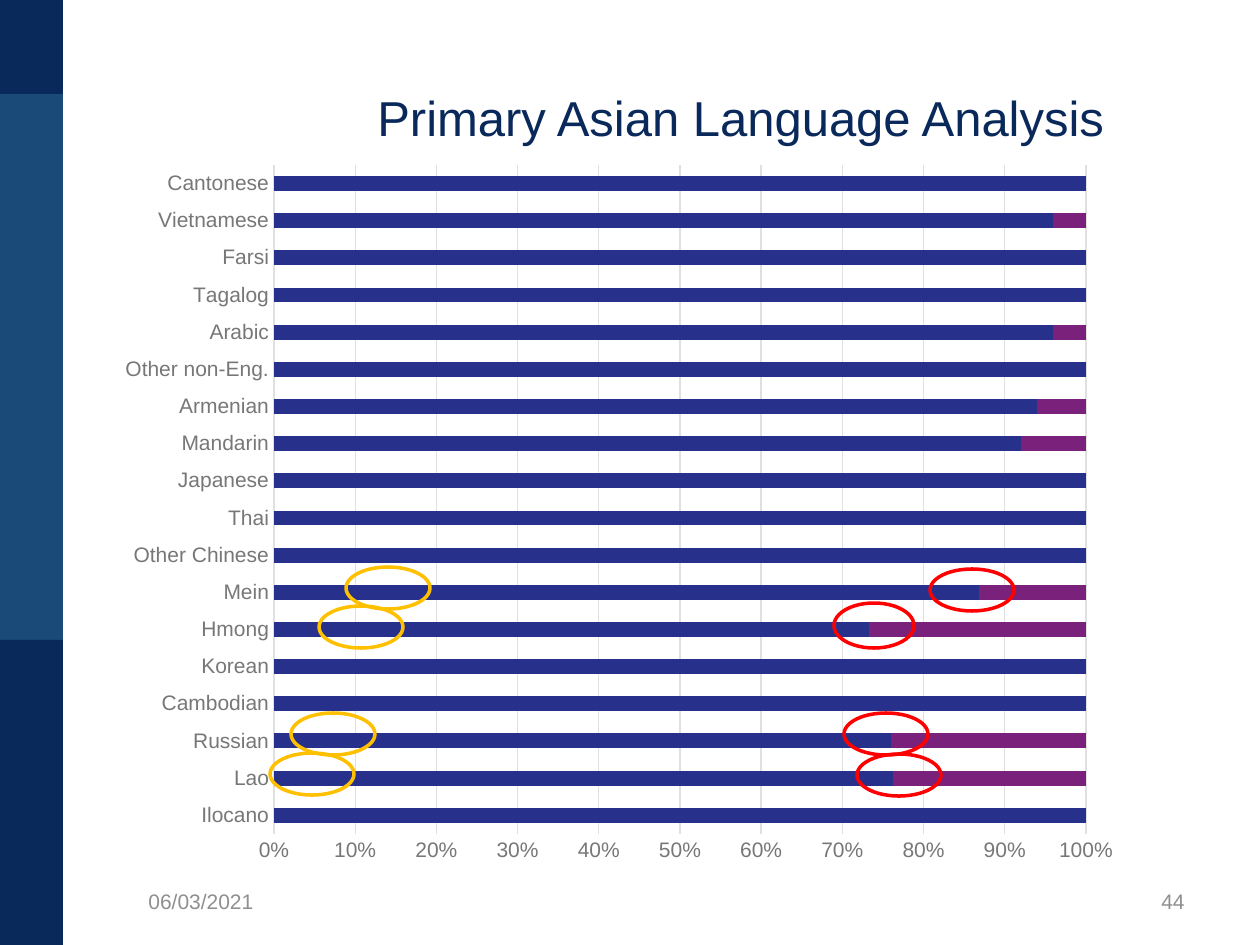
from dataclasses import dataclass

from lxml import etree
from pptx import Presentation
from pptx.chart.data import CategoryChartData
from pptx.dml.color import RGBColor
from pptx.enum.chart import XL_CHART_TYPE, XL_TICK_MARK
from pptx.enum.shapes import MSO_SHAPE
from pptx.enum.text import MSO_ANCHOR, PP_ALIGN
from pptx.oxml.ns import qn
from pptx.util import Emu, Pt

BAR_STACKED_100 = XL_CHART_TYPE.BAR_STACKED_100
NO_TICK = XL_TICK_MARK.NONE
RECTANGLE, OVAL = MSO_SHAPE.RECTANGLE, MSO_SHAPE.OVAL
MIDDLE = MSO_ANCHOR.MIDDLE
LEFT, CENTER, RIGHT = PP_ALIGN.LEFT, PP_ALIGN.CENTER, PP_ALIGN.RIGHT
EMU_PER_PX = 914400 / 126


@dataclass(frozen=True)
class Theme:
    font: str = "Arial"
    navy: str = "0A295B"
    blue: str = "1A4A78"
    bar: str = "27318B"
    bar_end: str = "7A227B"
    axis_text: str = "777777"
    grid: str = "E0E0E0"
    footer: str = "8F8F8F"
    amber: str = "FFC000"
    red: str = "FF0000"
    title_size: int = 28
    small_size: int = 12
    ring_width: int = 2
    grid_width: float = 0.75


THEME = Theme()

LANGUAGES = [
    ("Ilocano", 0, 100, 0),
    ("Lao", 6, 71, 24),
    ("Russian", 8, 68, 24),
    ("Cambodian", 11, 89, 0),
    ("Korean", 11, 89, 0),
    ("Hmong", 12, 62, 27),
    ("Mein", 13, 73, 13),
    ("Other Chinese", 14, 86, 0),
    ("Thai", 17, 83, 0),
    ("Japanese", 20, 80, 0),
    ("Mandarin", 27, 65, 8),
    ("Armenian", 33, 61, 6),
    ("Other non-Eng.", 42, 58, 0),
    ("Arabic", 46, 50, 4),
    ("Tagalog", 57, 43, 0),
    ("Farsi", 62, 38, 0),
    ("Vietnamese", 69, 27, 4),
    ("Cantonese", 85, 15, 0),
]

SIDEBAR = [(0, 945, THEME.blue), (0, 94, THEME.navy), (640, 305, THEME.navy)]
CHART_BOX = (105, 150, 1029, 726)
PLOT_BOX = (274, 165, 812, 669)
AMBER_RINGS = [(346, 567, 84, 42), (319, 606, 84, 42), (291, 713, 84, 42), (270, 753, 84, 42)]
RED_RINGS = [(930, 569, 84, 42), (834, 603, 80, 45), (844, 713, 84, 42), (857, 754, 84, 42)]


def px(length):
    return Emu(round(length * EMU_PER_PX))


def place(box):
    return [px(length) for length in box]


def color(value):
    return RGBColor.from_string(value)


def set_font(font, size, value):
    font.name = THEME.font
    font.size = Pt(size)
    font.color.rgb = color(value)


def add_band(slide, top, height, fill):
    band = slide.shapes.add_shape(RECTANGLE, *place((0, top, 63, height)))
    band.shadow.inherit = False
    band.fill.solid()
    band.fill.fore_color.rgb = color(fill)
    band.line.fill.background()


def add_ring(slide, box, line):
    ring = slide.shapes.add_shape(OVAL, *place(box))
    ring.shadow.inherit = False
    ring.fill.background()
    ring.line.color.rgb = color(line)
    ring.line.width = Pt(THEME.ring_width)


def add_label(slide, box, text, size, value, align):
    frame = slide.shapes.add_textbox(*place(box)).text_frame
    frame.word_wrap = True
    frame.vertical_anchor = MIDDLE
    paragraph = frame.paragraphs[0]
    paragraph.text = text
    paragraph.alignment = align
    set_font(paragraph.font, size, value)


def style_axis(axis):
    axis.major_tick_mark = NO_TICK
    axis.minor_tick_mark = NO_TICK
    set_font(axis.tick_labels.font, THEME.small_size, THEME.axis_text)


def style_line(line):
    line.color.rgb = color(THEME.grid)
    line.width = Pt(THEME.grid_width)


def fix_plot_area(chart):
    plot_area = chart.element.find(".//" + qn("c:plotArea"))
    for automatic in plot_area.findall(qn("c:layout")):
        plot_area.remove(automatic)
    layout = etree.Element(qn("c:layout"))
    manual = etree.SubElement(layout, qn("c:manualLayout"))
    left, top, width, height = CHART_BOX
    plot_left, plot_top, plot_width, plot_height = PLOT_BOX
    settings = {
        "layoutTarget": "inner",
        "xMode": "edge",
        "yMode": "edge",
        "x": (plot_left - left) / width,
        "y": (plot_top - top) / height,
        "w": plot_width / width,
        "h": plot_height / height,
    }
    for name, value in settings.items():
        etree.SubElement(manual, qn("c:" + name)).set("val", str(value))
    plot_area.insert(0, layout)


def add_language_chart(slide):
    names, *shares = zip(*LANGUAGES)
    data = CategoryChartData()
    data.categories = names
    for number, values in enumerate(shares, 1):
        data.add_series(f"Series {number}", values)
    chart = slide.shapes.add_chart(BAR_STACKED_100, *place(CHART_BOX), data).chart
    chart.has_title = False
    chart.has_legend = False
    set_font(chart.font, THEME.small_size, THEME.axis_text)

    bars = chart.plots[0]
    bars.gap_width = 150
    bars.overlap = 100
    bars.vary_by_categories = False
    for series, fill in zip(bars.series, (THEME.bar, THEME.bar, THEME.bar_end)):
        series.format.fill.solid()
        series.format.fill.fore_color.rgb = color(fill)

    style_axis(chart.category_axis)
    style_line(chart.category_axis.format.line)
    share_axis = chart.value_axis
    style_axis(share_axis)
    share_axis.format.line.fill.background()
    share_axis.minimum_scale = 0
    share_axis.maximum_scale = 1
    share_axis.major_unit = 0.1
    share_axis.tick_labels.number_format = "0%"
    share_axis.tick_labels.number_format_is_linked = False
    share_axis.has_major_gridlines = True
    style_line(share_axis.major_gridlines.format.line)
    fix_plot_area(chart)


def main():
    deck = Presentation()
    deck.slide_width, deck.slide_height = px(1260), px(945)
    slide = deck.slides.add_slide(deck.slide_layouts[6])

    for band in SIDEBAR:
        add_band(slide, *band)
    add_label(slide, (252, 38, 977, 157), "Primary Asian Language Analysis",
              THEME.title_size, THEME.navy, CENTER)
    add_language_chart(slide)
    for left, text, align in ((136, "06/03/2021", LEFT), (903, "44", RIGHT)):
        add_label(slide, (left, 876, 294, 50), text, THEME.small_size, THEME.footer, align)
    for rings, line in ((AMBER_RINGS, THEME.amber), (RED_RINGS, THEME.red)):
        for box in rings:
            add_ring(slide, box, line)

    deck.save("out.pptx")


if __name__ == "__main__":
    main()
